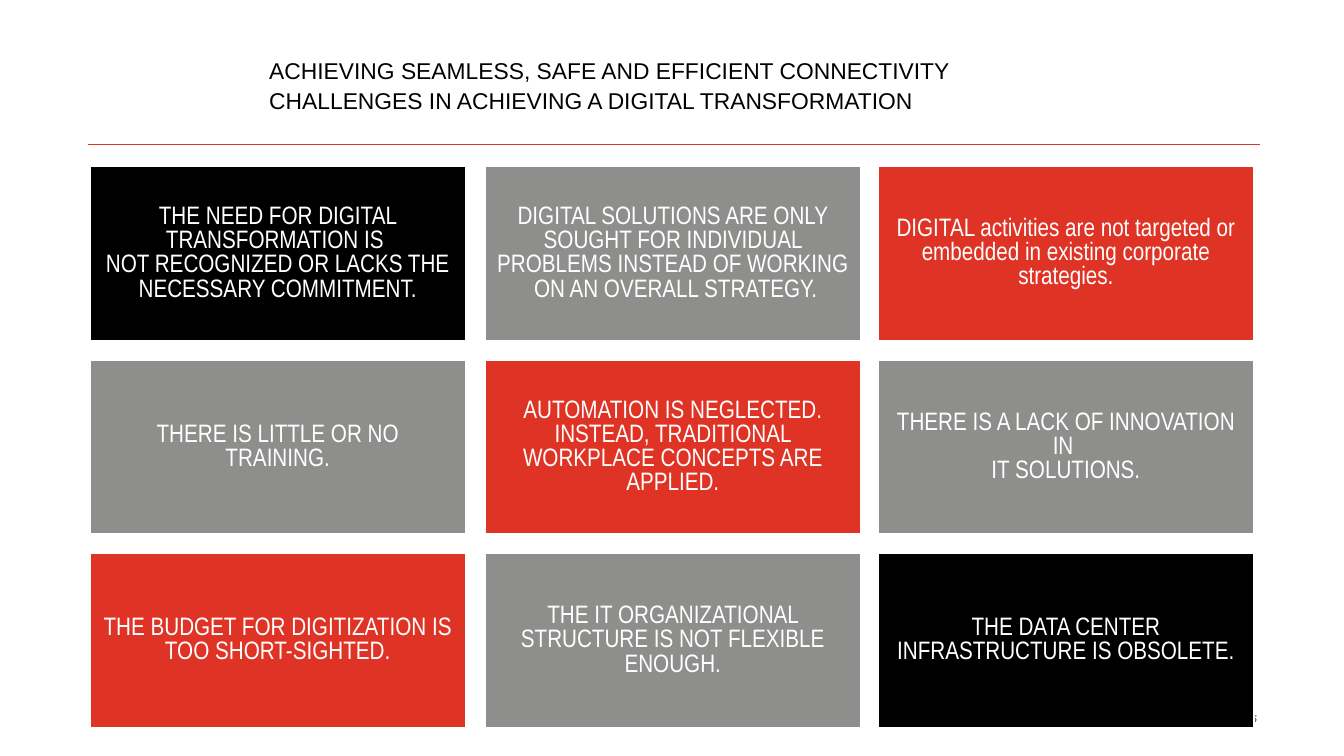
from dataclasses import dataclass

import pptx
import pptx.dml.color
import pptx.enum.shapes
import pptx.enum.text
import pptx.oxml.ns
import pptx.presentation
import pptx.shapes.base
import pptx.slide
import pptx.util
from lxml import etree

Pt = pptx.util.Pt
Align = pptx.enum.text.PP_ALIGN
Anchor = pptx.enum.text.MSO_ANCHOR


@dataclass(frozen=True)
class Theme:
    black: str = "000000"
    grey: str = "8E8E8D"
    red: str = "DF3425"
    white: str = "FFFFFF"
    heading_font: str = "Arial"
    tile_font: str = "Arial Narrow"
    number_font: str = "Karla"
    heading_size: float = 16.3
    tile_size: float = 18
    number_size: float = 7.3


@dataclass(frozen=True)
class Challenge:
    text: str
    fill: str


THEME = Theme()
COLUMN_LEFTS = (64.1, 346.3, 627.1)
FIRST_ROW_TOP, ROW_PITCH = 118.8, 138.25
TILE_WIDTH, TILE_HEIGHT = 268.6, 124.6

CHALLENGES = (
    Challenge("THE NEED FOR DIGITAL TRANSFORMATION IS \n"
              "NOT RECOGNIZED OR LACKS THE NECESSARY COMMITMENT.", THEME.black),
    Challenge("DIGITAL SOLUTIONS ARE ONLY SOUGHT FOR INDIVIDUAL PROBLEMS INSTEAD OF WORKING\n"
              " ON AN OVERALL STRATEGY.", THEME.grey),
    Challenge("DIGITAL activities are not targeted or embedded in existing corporate strategies.",
              THEME.red),
    Challenge("THERE IS LITTLE OR NO TRAINING.", THEME.grey),
    Challenge("AUTOMATION IS NEGLECTED. INSTEAD, TRADITIONAL WORKPLACE CONCEPTS ARE APPLIED.",
              THEME.red),
    Challenge("THERE IS A LACK OF INNOVATION IN \nIT SOLUTIONS.", THEME.grey),
    Challenge("THE BUDGET FOR DIGITIZATION IS TOO SHORT-SIGHTED.", THEME.red),
    Challenge("THE IT ORGANIZATIONAL STRUCTURE IS NOT FLEXIBLE ENOUGH.", THEME.grey),
    Challenge("THE DATA CENTER INFRASTRUCTURE IS OBSOLETE.", THEME.black),
)


def rgb(value: str) -> pptx.dml.color.RGBColor:
    return pptx.dml.color.RGBColor.from_string(value)


def write(shape: pptx.shapes.base.BaseShape, text: str, *, font: str = THEME.heading_font,
          size: float = THEME.heading_size, color: str = THEME.black,
          align: Align = Align.LEFT, anchor: Anchor = Anchor.TOP,
          line_spacing: float = 1.0, space_after: float = 0,
          inset_x: float = 2.9, inset_y: float = 0, italic: bool = False) -> None:
    frame = shape.text_frame
    frame.word_wrap = True
    frame.auto_size = pptx.enum.text.MSO_AUTO_SIZE.NONE
    frame.vertical_anchor = anchor
    frame.margin_left = frame.margin_right = Pt(inset_x)
    frame.margin_top = frame.margin_bottom = Pt(inset_y)
    paragraph = frame.paragraphs[0]
    paragraph.text = text
    paragraph.alignment = align
    paragraph.line_spacing = line_spacing
    paragraph.space_after = Pt(space_after)
    for run in paragraph.runs:
        run.font.name = font
        run.font.size = Pt(size)
        run.font.italic = italic
        run.font.color.rgb = rgb(color)


def draw_heading(slide: pptx.slide.Slide) -> None:
    title = slide.shapes.title
    title.left, title.top, title.width, title.height = Pt(189.4), Pt(28.1), Pt(711.4), Pt(32.4)
    write(title, "ACHIEVING SEAMLESS, SAFE AND EFFICIENT CONNECTIVITY",
          anchor=Anchor.BOTTOM, line_spacing=0.9)
    subtitle = slide.shapes.add_textbox(Pt(189.4), Pt(61.9), Pt(711.4), Pt(22.3))
    write(subtitle, "CHALLENGES IN ACHIEVING A DIGITAL TRANSFORMATION")
    rule = slide.shapes.add_connector(pptx.enum.shapes.MSO_CONNECTOR.STRAIGHT,
                                      Pt(62.6), Pt(103), Pt(900), Pt(103))
    rule.line.color.rgb = rgb(THEME.red)
    rule.line.width = Pt(0.25)
    etree.SubElement(rule._element.spPr, pptx.oxml.ns.qn("a:effectLst"))


def draw_page_number(slide: pptx.slide.Slide) -> None:
    number = slide.shapes.add_textbox(Pt(888.5), Pt(509), Pt(12.2), Pt(8.6))
    write(number, "5", font=THEME.number_font, size=THEME.number_size,
          align=Align.RIGHT, anchor=Anchor.MIDDLE, italic=True)


def draw_challenge(slide: pptx.slide.Slide, challenge: Challenge, index: int) -> None:
    row, column = divmod(index, len(COLUMN_LEFTS))
    tile = slide.shapes.add_shape(
        pptx.enum.shapes.MSO_SHAPE.RECTANGLE, Pt(COLUMN_LEFTS[column]),
        Pt(FIRST_ROW_TOP + row * ROW_PITCH), Pt(TILE_WIDTH), Pt(TILE_HEIGHT))
    tile.shadow.inherit = False
    tile.fill.solid()
    tile.fill.fore_color.rgb = rgb(challenge.fill)
    tile.line.color.rgb = rgb(THEME.white)
    tile.line.width = Pt(1.5)
    write(tile, challenge.text, font=THEME.tile_font, size=THEME.tile_size,
          color=THEME.white, align=Align.CENTER, anchor=Anchor.MIDDLE,
          line_spacing=0.8, space_after=10, inset_x=8.6, inset_y=8.6)


def main() -> None:
    deck = pptx.Presentation()
    deck.slide_width, deck.slide_height = Pt(960), Pt(540)
    slide = deck.slides.add_slide(deck.slide_layouts.get_by_name("Title Only"))
    draw_heading(slide)
    draw_page_number(slide)
    for index, challenge in enumerate(CHALLENGES):
        draw_challenge(slide, challenge, index)
    deck.save("out.pptx")


if __name__ == "__main__":
    main()
